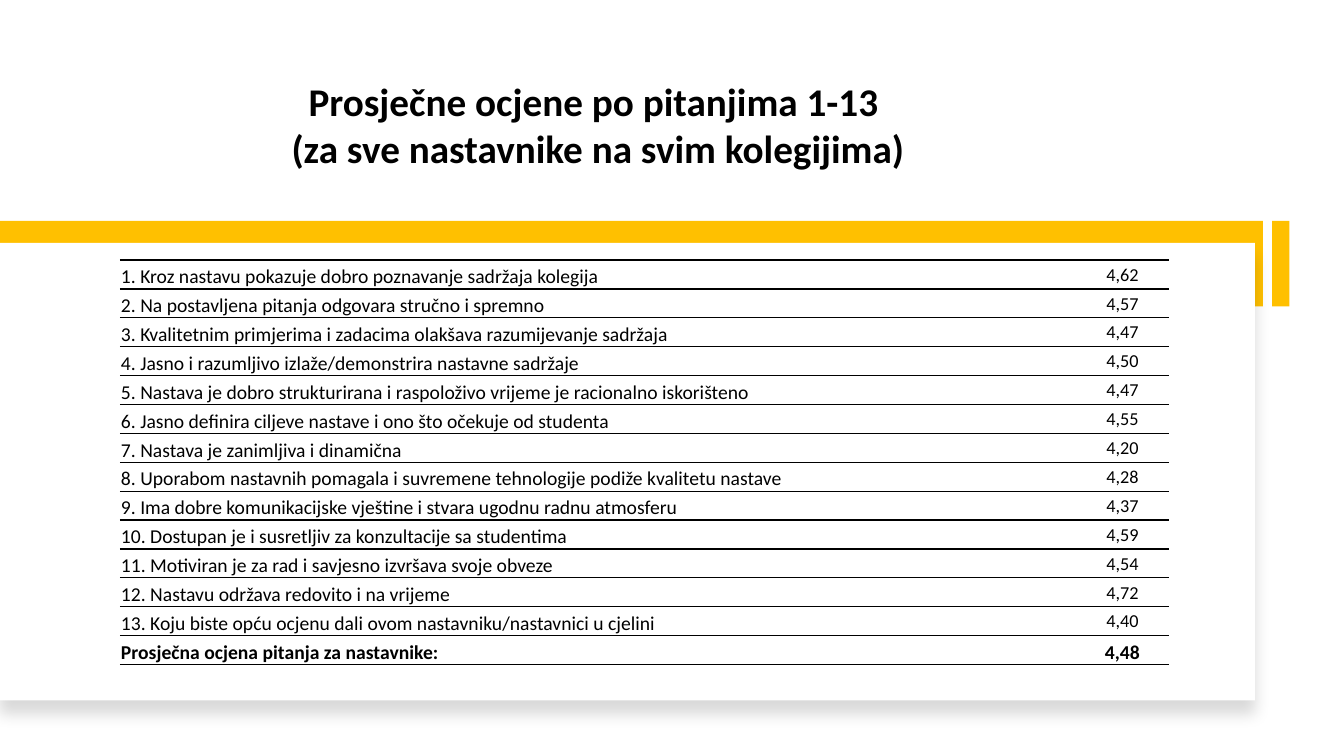
"""Build the slide with average teacher ratings per survey question."""
from dataclasses import dataclass

from lxml import etree
from pptx import Presentation
from pptx import util as u
from pptx.dml.color import RGBColor
from pptx.enum import shapes, text
from pptx.oxml import ns

COLOURS = {"ink": "000000", "gold": "FFC000", "paper": "FFFFFF"}
FONT = "Calibri"
GRID = u.Inches(0.1)
SLIDE_COLUMNS, SLIDE_ROWS = 133.33, 75
TABLE_ROW = 2.87
SCORE_COLUMN = 9.3


@dataclass(frozen=True)
class Area:
    """Place on the grid, in columns and rows."""
    left: float
    top: float
    width: float
    height: float

    def box(self) -> list[int]:
        return [round(n * GRID) for n in (self.left, self.top, self.width, self.height)]


@dataclass(frozen=True)
class Block:
    area: Area
    colour: str
    rotation: int = 0


@dataclass(frozen=True)
class Rating:
    question: str
    score: str
    total: bool = False


HEADING = "Prosječne ocjene po pitanjima 1-13 \v(za sve nastavnike na svim kolegijima)"
HEADING_AREA = Area(8.8, 4.2, 101, 13.3)
GOLD_BARS = [
    Block(Area(122.8, 25.3, 8.5, 1.7), "gold", 90),
    Block(Area(0, 21.9, 125.3, 8.5), "gold"),
]
PANEL = Block(Area(0, 24.1, 124.5, 45.4), "paper")
QUESTIONS = [
    ("Kroz nastavu pokazuje dobro poznavanje sadržaja kolegija", "4,62"),
    ("Na postavljena pitanja odgovara stručno i spremno", "4,57"),
    ("Kvalitetnim primjerima i zadacima olakšava razumijevanje sadržaja", "4,47"),
    ("Jasno i razumljivo izlaže/demonstrira nastavne sadržaje", "4,50"),
    ("Nastava je dobro strukturirana i raspoloživo vrijeme je racionalno iskorišteno", "4,47"),
    ("Jasno definira ciljeve nastave i ono što očekuje od studenta", "4,55"),
    ("Nastava je zanimljiva i dinamična", "4,20"),
    ("Uporabom nastavnih pomagala i suvremene tehnologije podiže kvalitetu nastave", "4,28"),
    ("Ima dobre komunikacijske vještine i stvara ugodnu radnu atmosferu", "4,37"),
    ("Dostupan je i susretljiv za konzultacije sa studentima", "4,59"),
    ("Motiviran je za rad i savjesno izvršava svoje obveze", "4,54"),
    ("Nastavu održava redovito i na vrijeme", "4,72"),
    ("Koju biste opću ocjenu dali ovom nastavniku/nastavnici u cjelini", "4,40"),
]
RATINGS = [Rating(f"{n}. {question}", score) for n, (question, score) in enumerate(QUESTIONS, 1)]
RATINGS.append(Rating("Prosječna ocjena pitanja za nastavnike:", "4,48", True))
RATINGS_AREA = Area(11.9, 25.8, 104.1, TABLE_ROW * len(RATINGS))
CELL_FORMAT = {
    "margin_left": u.Inches(0.01),
    "margin_right": u.Inches(0.01),
    "margin_top": u.Inches(0.01),
    "margin_bottom": 0,
}


def rgb(colour: str) -> RGBColor:
    return RGBColor.from_string(COLOURS[colour])


def apply(target, values: dict) -> None:
    for attribute, value in values.items():
        setattr(target, attribute, value)


def format_font(font, size: int, bold: bool) -> None:
    apply(font, {"name": FONT, "size": u.Pt(size), "bold": bold})
    font.color.rgb = rgb("ink")


def write_heading(title) -> None:
    apply(title, dict(zip(("left", "top", "width", "height"), HEADING_AREA.box())))
    frame = title.text_frame
    apply(frame, {"text": HEADING, "word_wrap": True, "vertical_anchor": text.MSO_ANCHOR.BOTTOM})
    heading = frame.paragraphs[0]
    heading.alignment = text.PP_ALIGN.CENTER
    for run in heading.runs:
        format_font(run.font, 28, True)


def draw_block(parent, block: Block):
    rectangle = parent.add_shape(shapes.MSO_SHAPE.RECTANGLE, *block.area.box())
    rectangle.rotation = block.rotation
    rectangle.shadow.inherit = False
    rectangle.fill.solid()
    rectangle.fill.fore_color.rgb = rgb(block.colour)
    rectangle.line.fill.background()
    return rectangle


def cast_shadow(panel) -> None:
    effects = panel._element.spPr.find(ns.qn("a:effectLst"))
    shadow = etree.SubElement(effects, ns.qn("a:outerShdw"), blurRad=str(u.Pt(11)),
                              dist=str(u.Pt(10)), dir="5400000", algn="t", rotWithShape="0")
    tint = etree.SubElement(shadow, ns.qn("a:srgbClr"), val=COLOURS["ink"])
    etree.SubElement(tint, ns.qn("a:alpha"), val="15000")


def rule_cell(cell) -> None:
    properties = cell._tc.get_or_add_tcPr()
    for position, side in enumerate(("lnL", "lnR", "lnT", "lnB")):
        border = etree.Element(ns.qn(f"a:{side}"), w=str(u.Pt(1)))
        if side in ("lnT", "lnB"):
            fill = etree.SubElement(border, ns.qn("a:solidFill"))
            etree.SubElement(fill, ns.qn("a:srgbClr"), val=COLOURS["ink"])
        else:
            etree.SubElement(border, ns.qn("a:noFill"))
        properties.insert(position, border)


def fill_cell(cell, wording: str, size: int, bold: bool, align, anchor) -> None:
    apply(cell, CELL_FORMAT | {"text": wording, "vertical_anchor": anchor})
    cell.fill.solid()
    cell.fill.fore_color.rgb = rgb("paper")
    rule_cell(cell)
    paragraph = cell.text_frame.paragraphs[0]
    paragraph.alignment = align
    format_font(paragraph.runs[0].font, size, bold)


def draw_ratings(slide) -> None:
    table = slide.shapes.add_table(len(RATINGS), 2, *RATINGS_AREA.box()).table
    apply(table, {"first_row": False, "horz_banding": False})
    table.columns[0].width = round((RATINGS_AREA.width - SCORE_COLUMN) * GRID)
    table.columns[1].width = round(SCORE_COLUMN * GRID)
    bottom, middle = text.MSO_ANCHOR.BOTTOM, text.MSO_ANCHOR.MIDDLE
    for row, rating in enumerate(RATINGS):
        fill_cell(table.cell(row, 0), rating.question, 14, rating.total,
                  text.PP_ALIGN.LEFT, bottom)
        fill_cell(table.cell(row, 1), rating.score, 14 if rating.total else 13, rating.total,
                  text.PP_ALIGN.CENTER, bottom if rating.total else middle)


def main() -> None:
    deck = Presentation()
    apply(deck, {"slide_width": round(SLIDE_COLUMNS * GRID), "slide_height": SLIDE_ROWS * GRID})
    slide = deck.slides.add_slide(deck.slide_layouts[5])
    write_heading(slide.shapes.title)
    bars = slide.shapes.add_group_shape()
    for bar in GOLD_BARS:
        draw_block(bars.shapes, bar)
    cast_shadow(draw_block(slide.shapes, PANEL))
    draw_ratings(slide)
    deck.save("out.pptx")


if __name__ == "__main__":
    main()
